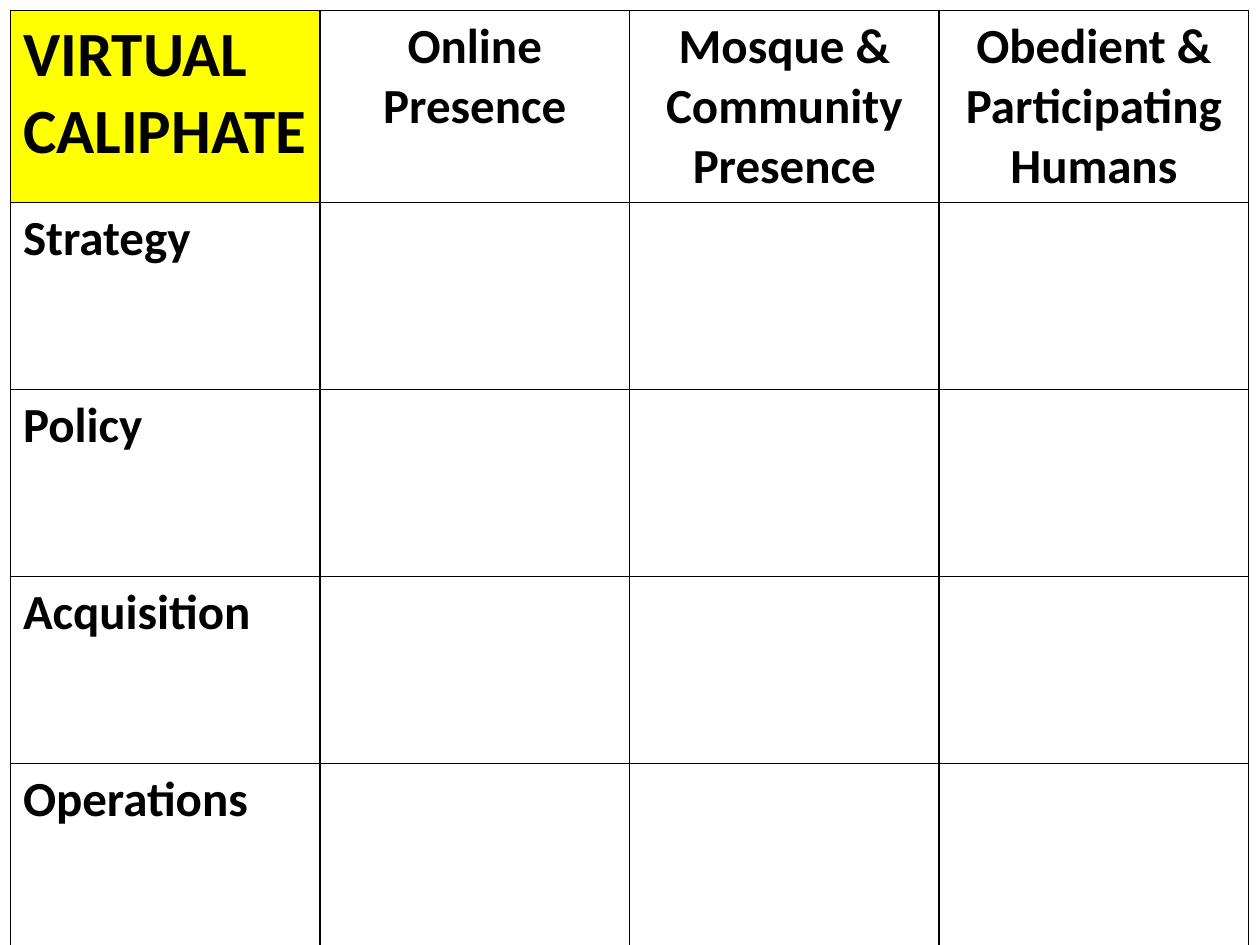
from lxml.etree import SubElement
from pptx import Presentation
from pptx.dml.color import RGBColor
from pptx.enum.text import PP_ALIGN
from pptx.oxml.ns import qn
from pptx.util import Cm, Pt

HEADERS = ["VIRTUAL CALIPHATE", "Online Presence",
           "Mosque & Community Presence", "Obedient & Participating Humans"]
LEVELS = ["Strategy", "Policy", "Acquisition", "Operations"]
BLACK, YELLOW = "000000", "FFFF00"
FONT_FORMAT = {"name": "Calibri", "size": Pt(28), "bold": True}


def color(hex_string):
    return RGBColor.from_string(hex_string)


def add_borders(cell, hex_string, width):
    """Line all four sides; call before setting the fill, which must follow in the XML."""
    properties = cell._tc.get_or_add_tcPr()
    for side in ("a:lnL", "a:lnR", "a:lnT", "a:lnB"):
        line = SubElement(properties, qn(side), w=str(width))
        fill = SubElement(line, qn("a:solidFill"))
        SubElement(fill, qn("a:srgbClr"), val=hex_string)


presentation = Presentation()
presentation.slide_width = Cm(25.4)
presentation.slide_height = Cm(19.05)
slide = presentation.slides.add_slide(presentation.slide_layouts[6])

rows = [HEADERS] + [[level, "", "", ""] for level in LEVELS]
column_width, row_height = Cm(6.24), Cm(3.77)
table = slide.shapes.add_table(
    len(rows), len(HEADERS), Cm(0.21), Cm(0.21),
    column_width * len(HEADERS), row_height * len(rows)).table
table.horz_banding = False
table.first_row = False
for column in table.columns:
    column.width = column_width
for row in table.rows:
    row.height = row_height

for row_index, texts in enumerate(rows):
    for column_index, text in enumerate(texts):
        cell = table.cell(row_index, column_index)
        add_borders(cell, BLACK, Pt(1))
        cell.fill.background()
        if not text:
            continue
        paragraph = cell.text_frame.paragraphs[0]
        paragraph.alignment = PP_ALIGN.CENTER if column_index else PP_ALIGN.LEFT
        run = paragraph.add_run()
        run.text = text
        for name, value in FONT_FORMAT.items():
            setattr(run.font, name, value)
        run.font.color.rgb = color(BLACK)

corner = table.cell(0, 0)
corner.fill.solid()
corner.fill.fore_color.rgb = color(YELLOW)
corner.text_frame.paragraphs[0].runs[0].font.size = Pt(36)

presentation.save("out.pptx")
